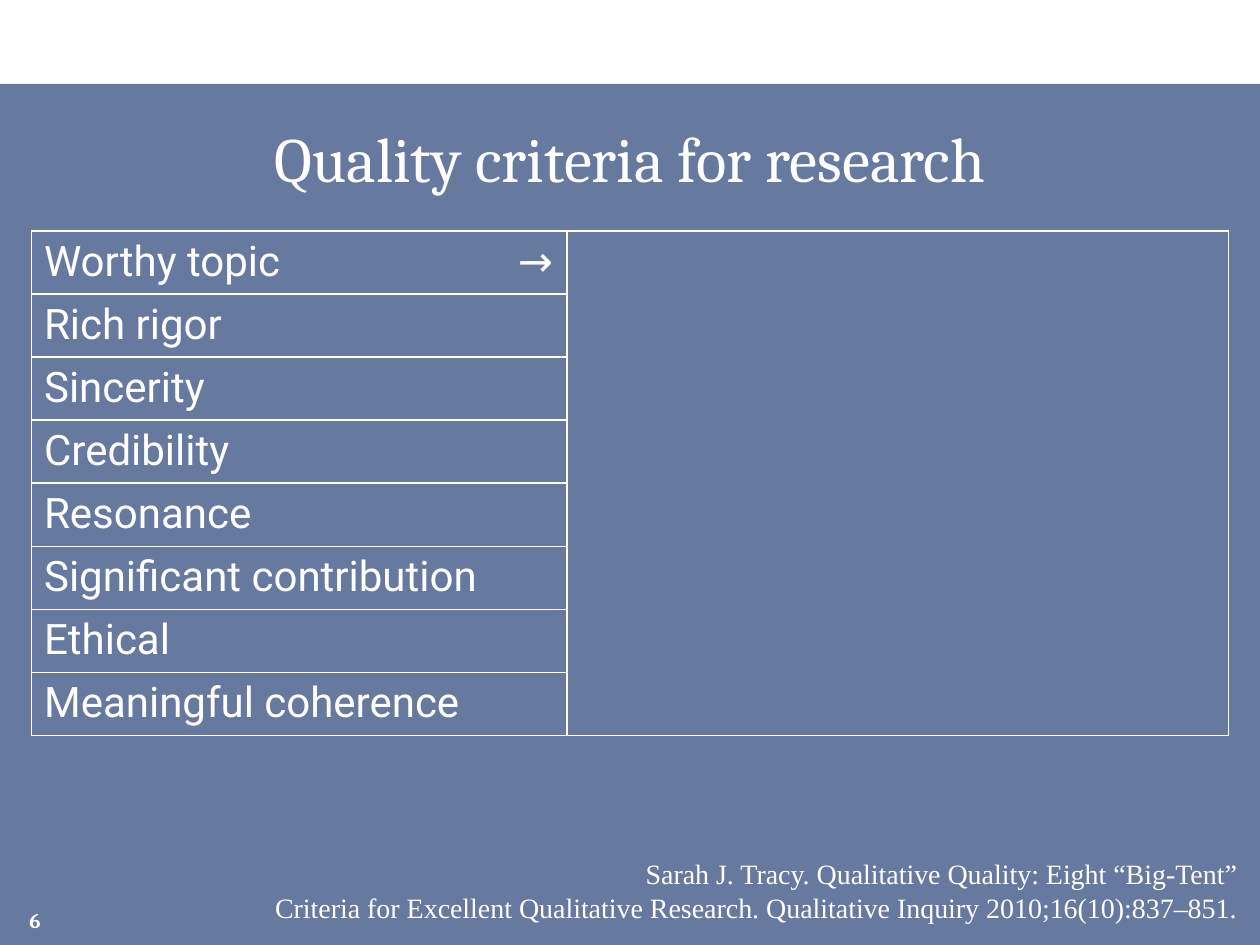
from lxml import etree
from pptx import Presentation, util as u
from pptx.dml.color import RGBColor
from pptx.enum import shapes, text
from pptx.oxml import ns

WIDE, HIGH = 10, 7.5
COL, ROW = WIDE / 40, HIGH / 90
WHITE = "FFFFFF"
LEFT, MID, RIGHT = text.PP_ALIGN.LEFT, text.PP_ALIGN.CENTER, text.PP_ALIGN.RIGHT
NO_STYLE = "{2D5ABB26-0587-4C30-8999-92F81FD0307C}"
TITLE = {"name": "Cambria", "size": u.Pt(36)}
BODY = {"name": "Roboto", "size": u.Pt(24)}
CITE = {"name": "Times New Roman", "size": u.Pt(16)}
PAGE = {"name": "Cambria", "size": u.Pt(12), "bold": True}
TOPICS = ["Worthy topic", "Rich rigor", "Sincerity", "Credibility", "Resonance",
          "Significant contribution", "Ethical", "Meaningful coherence"]
SOURCE = ["Sarah J. Tracy. Qualitative Quality: Eight “Big-Tent”",
          "Criteria for Excellent Qualitative Research. "
          "Qualitative Inquiry 2010;16(10):837–851."]


def paint(color, tone):
    color.rgb = RGBColor.from_string(tone)


def place(box):
    x, y, w, h = box
    return [u.Inches(n) for n in (x * COL, y * ROW, w * COL, h * ROW)]


def child(node, tag, **attrs):
    return etree.SubElement(node, ns.qn(tag), **attrs)


def write(frame, lines, look, align):
    for i, line in enumerate(lines):
        para = frame.add_paragraph() if i else frame.paragraphs[0]
        para.alignment = align
        run = para.add_run()
        run.text = line
        for key, value in look.items():
            setattr(run.font, key, value)
        paint(run.font.color, WHITE)


def label(slide, box, lines, look, align, anchor):
    frame = slide.shapes.add_textbox(*place(box)).text_frame
    frame.word_wrap = True
    frame.vertical_anchor = anchor
    write(frame, lines, look, align)


def panel(slide, box):
    shape = slide.shapes.add_shape(shapes.MSO_SHAPE.RECTANGLE, *place(box))
    shape.shadow.inherit = False
    shape.fill.solid()
    paint(shape.fill.fore_color, "002060")
    shape.line.fill.background()
    tone = shape._element.spPr.find(".//" + ns.qn("a:srgbClr"))
    child(tone, "a:alpha", val="60000")


def border(cell, sides):
    props = cell._tc.get_or_add_tcPr()
    for side in "LRTB":
        if side in sides:
            line = child(props, "a:ln" + side, w=str(u.Pt(1)))
            child(child(line, "a:solidFill"), "a:srgbClr", val=WHITE)
        else:
            child(child(props, "a:ln" + side, w="0"), "a:noFill")
    cell.fill.background()


def topics(slide, box):
    count = len(TOPICS)
    grid = slide.shapes.add_table(count, 3, *place(box)).table
    grid.first_row = grid.horz_banding = False
    grid._tbl.tblPr.find(ns.qn("a:tableStyleId")).text = NO_STYLE
    for col, share in zip(grid.columns, (15, 2, 21)):
        col.width = u.Inches(share * COL)
    for i, topic in enumerate(TOPICS):
        for j, sides in enumerate(("LTB", "RTB", "LRTB")):
            border(grid.cell(i, j), sides)
        write(grid.cell(i, 0).text_frame, [topic], BODY, LEFT)
    write(grid.cell(0, 1).text_frame, ["→"], BODY, MID)
    grid.cell(0, 2).merge(grid.cell(count - 1, 2))


def main():
    deck = Presentation()
    deck.slide_width, deck.slide_height = u.Inches(WIDE), u.Inches(HIGH)
    slide = deck.slides.add_slide(deck.slide_layouts[6])
    top, middle = text.MSO_ANCHOR.TOP, text.MSO_ANCHOR.MIDDLE
    panel(slide, (0, 8, 40, 82))
    label(slide, (1, 10, 38, 10), ["Quality criteria for research"], TITLE, MID, middle)
    topics(slide, (1, 22, 38, 47.2))
    label(slide, (5.2, 81, 34.48, 7.7), SOURCE, CITE, RIGHT, top)
    label(slide, (0, 85.2, 1.68, 4.8), ["6"], PAGE, RIGHT, middle)
    deck.save("out.pptx")


if __name__ == "__main__":
    main()
